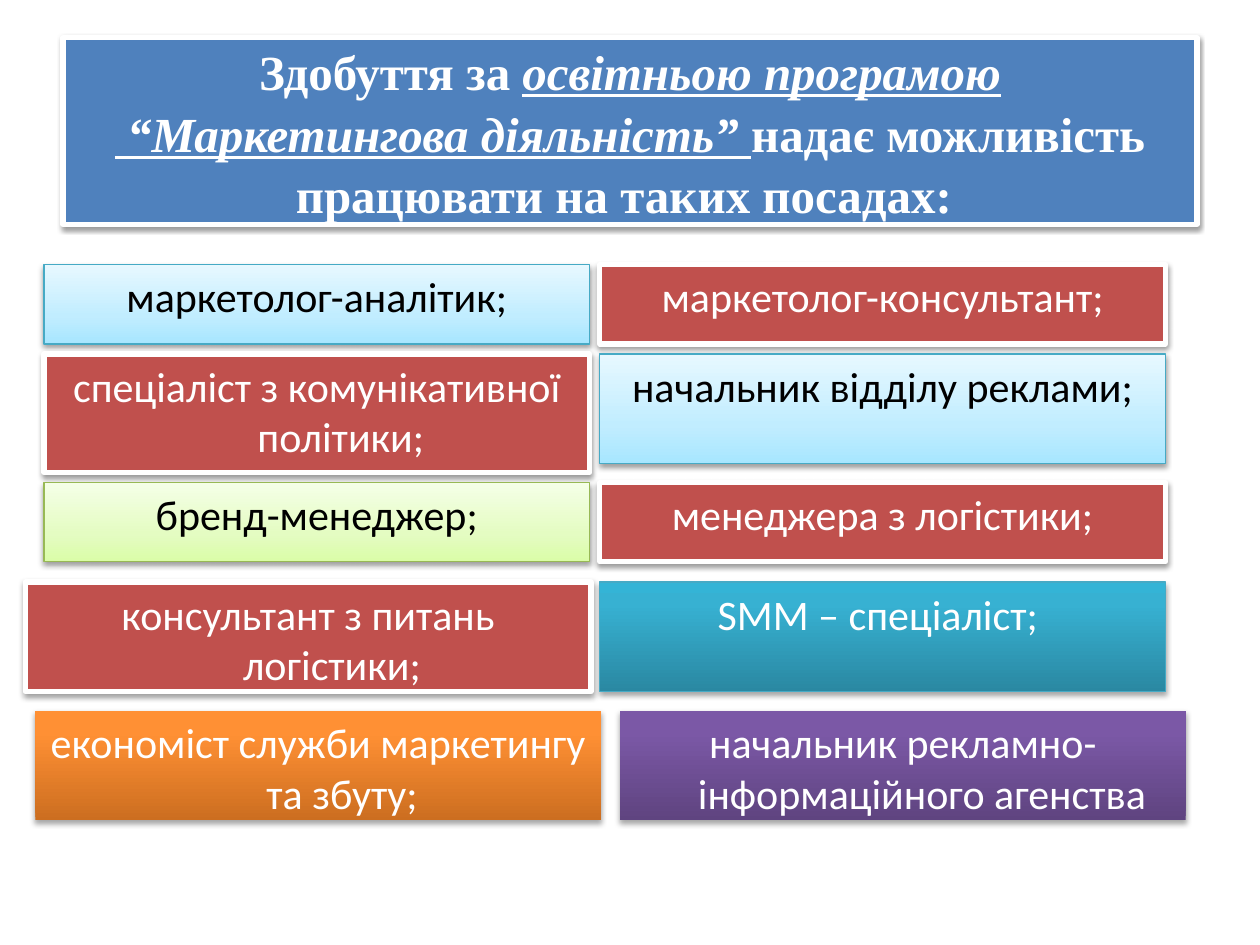
from lxml import etree
from pptx import Presentation
from pptx.dml.color import RGBColor
from pptx.enum.shapes import MSO_SHAPE
from pptx.enum.text import MSO_ANCHOR, PP_ALIGN
from pptx.oxml import parse_xml
from pptx.oxml.ns import nsdecls, qn
from pptx.util import Inches, Pt

COLORS = {"white": "FFFFFF", "black": "000000", "blue": "4F81BD", "red": "C0504D",
          "aqua line": "46AAC5", "green line": "98B955"}

# Style: fill (colour, or gradient stops from bottom to top), line, line width, text colour
STYLES = {
    "title": ("blue", "white", 3, "white"),
    "red": ("red", "white", 3, "white"),
    "pale aqua": ([(0, "A7E6FF"), (35, "C1EDFF"), (100, "E7F8FF")], "aqua line", 0.75, "black"),
    "pale green": ([(0, "DAFDA7"), (35, "E4FCC2"), (100, "F5FFE7")], "green line", 0.75, "black"),
    "aqua": ([(0, "2A88A2"), (80, "37B1D2"), (100, "34B4D6")], "aqua line", 0.75, "white"),
    "orange": ([(0, "CC6E20"), (80, "FF9034"), (100, "FF9136")], None, 0, "white"),
    "purple": ([(0, "5F4480"), (80, "7B58A6"), (100, "7C57A8")], None, 0, "white"),
}

# Title lines: (text, emphasised)
TITLE = [
    [("Здобуття за ", False), ("освітньою програмою", True)],
    [(" “Маркетингова діяльність” ", True),
     ("надає можливість працювати на таких посадах: ", False)],
]

NARROW, WIDE = 4.33, 4.49
LOW, HIGH = 0.63, 0.87
# Rows: top, then (left, width, height, style, text) for each job
ROWS = [
    (2.1, [(0.35, NARROW, LOW, "pale aqua", "маркетолог-аналітик;"),
           (4.76, WIDE, LOW, "red", "маркетолог-консультант;")]),
    (2.81, [(0.35, NARROW, 0.94, "red", "спеціаліст з комунікативної політики;"),
            (4.76, WIDE, HIGH, "pale aqua", "начальник відділу реклами;")]),
    (3.83, [(0.35, NARROW, LOW, "pale green", "бренд-менеджер;"),
            (4.76, WIDE, LOW, "red", "менеджера з логістики;")]),
    (4.62, [(0.2, WIDE, HIGH, "red", "консультант з питань логістики;"),
            (4.76, WIDE, HIGH, "aqua", "SMM – cпеціаліст; ")]),
    (5.64, [(0.28, WIDE, HIGH, "orange", "економіст служби маркетингу та збуту;"),
            (4.92, WIDE, HIGH, "purple", "начальник рекламно-інформаційного агенства ")]),
]


def rgb(name):
    return RGBColor.from_string(COLORS[name])


def fill_gradient(sp, stops):
    """Replace the two default stops with the given ones, running upwards."""
    sp.fill.gradient()
    sp.fill.gradient_angle = 90
    gs_list = sp._element.spPr.find(qn("a:gradFill")).find(qn("a:gsLst"))
    for gs in list(gs_list):
        gs_list.remove(gs)
    for pos, color in stops:
        gs = etree.SubElement(gs_list, qn("a:gs"), pos=str(pos * 1000))
        etree.SubElement(gs, qn("a:srgbClr"), val=color)


def add_shadow(sp, alpha, distance):
    sp.shadow.inherit = False
    effects = sp._element.spPr.find(qn("a:effectLst"))
    effects.append(parse_xml(
        f'<a:outerShdw {nsdecls("a")} blurRad="{Pt(3.1)}" dist="{Pt(distance)}" '
        f'dir="5400000" rotWithShape="0"><a:srgbClr val="{COLORS["black"]}">'
        f'<a:alpha val="{alpha * 1000}"/></a:srgbClr></a:outerShdw>'))


def add_box(slide, left, top, width, height, style):
    """Add a styled rectangle and return its text frame and first paragraph."""
    fill, line, line_width, text_color = STYLES[style]
    sp = slide.shapes.add_shape(MSO_SHAPE.RECTANGLE, Inches(left), Inches(top),
                                Inches(width), Inches(height))
    if isinstance(fill, str):
        sp.fill.solid()
        sp.fill.fore_color.rgb = rgb(fill)
    else:
        fill_gradient(sp, fill)
    if line:
        sp.line.color.rgb = rgb(line)
        sp.line.width = Pt(line_width)
    else:
        sp.line.fill.background()
    if style in ("aqua", "orange", "purple"):
        add_shadow(sp, 35, 1.8)
    else:
        add_shadow(sp, 38, 1.6)
    tf = sp.text_frame
    tf.word_wrap = True
    tf.vertical_anchor = MSO_ANCHOR.TOP
    p = tf.paragraphs[0]
    p.alignment = PP_ALIGN.CENTER
    p.font.color.rgb = rgb(text_color)
    return tf, p


prs = Presentation()
prs.slide_width, prs.slide_height = Inches(10), Inches(7.5)
slide = prs.slides.add_slide(prs.slide_layouts[6])

# Title
tf, p = add_box(slide, 0.5, 0.3, 9, 1.48, "title")
tf.vertical_anchor = MSO_ANCHOR.MIDDLE
p.line_spacing = 1.05
p.font.name, p.font.size, p.font.bold = "Times New Roman", Pt(28), True
for i, title_line in enumerate(TITLE):
    if i:
        p.add_line_break()
    for text, emphasised in title_line:
        r = p.add_run()
        r.text = text
        if emphasised:
            r.font.italic = r.font.underline = True

# Job boxes
for top, jobs in ROWS:
    for left, width, height, style, text in jobs:
        tf, p = add_box(slide, left, top, width, height, style)
        p.text = text
        p.font.name, p.font.size = "Calibri", Pt(24)
        pPr = p._p.get_or_add_pPr()
        pPr.set("marL", str(Inches(0.38)))
        pPr.set("indent", str(Inches(-0.38)))

prs.save("out.pptx")
